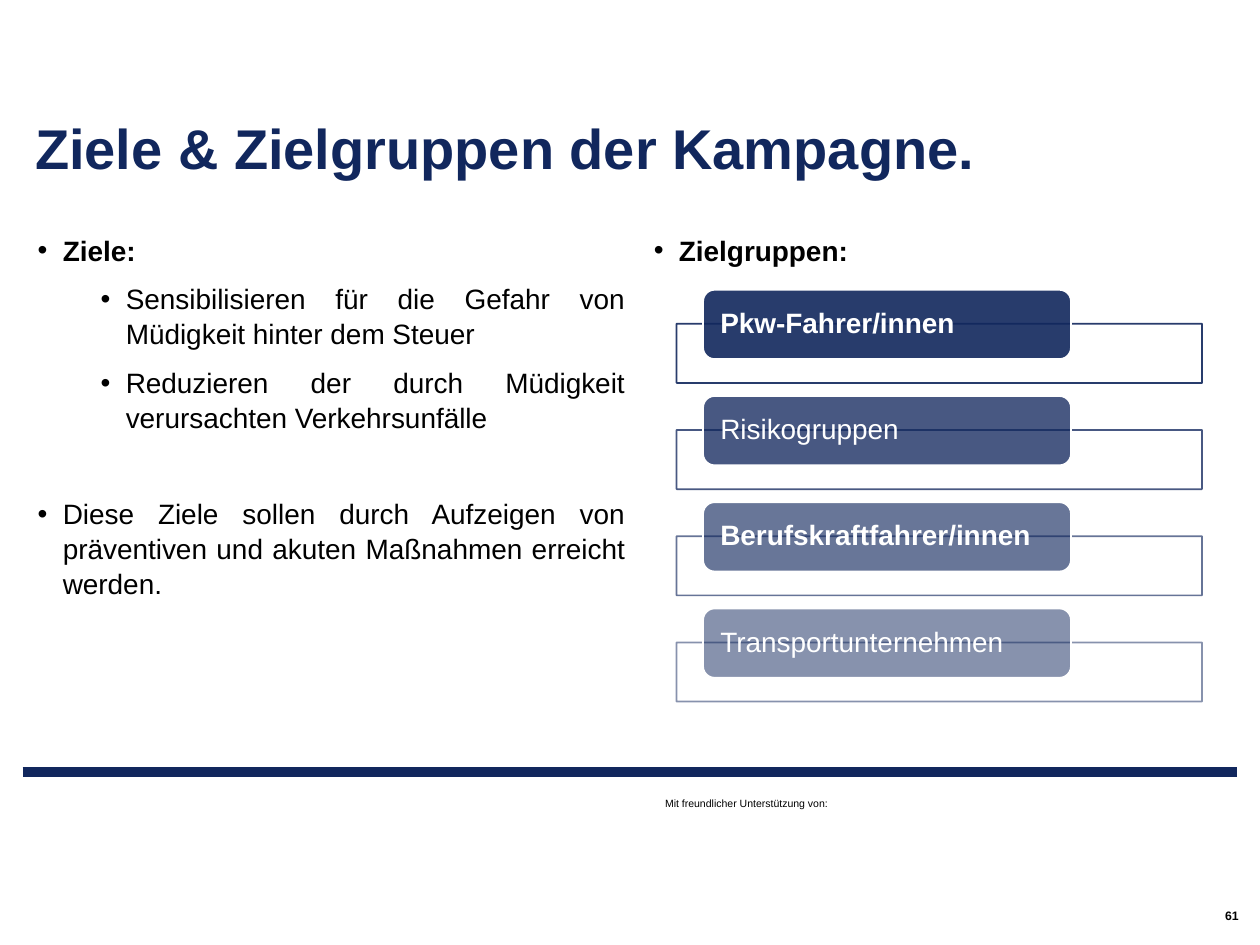
from pptx import Presentation
from pptx.dml.color import RGBColor
from pptx.enum.shapes import MSO_CONNECTOR, MSO_SHAPE
from pptx.enum.text import MSO_ANCHOR, PP_ALIGN
from pptx.oxml.ns import qn
from pptx.util import Inches, Pt
from lxml import etree

RECTANGLE, ROUNDED = MSO_SHAPE.RECTANGLE, MSO_SHAPE.ROUNDED_RECTANGLE
STRAIGHT = MSO_CONNECTOR.STRAIGHT
TOP, MIDDLE, BOTTOM = MSO_ANCHOR.TOP, MSO_ANCHOR.MIDDLE, MSO_ANCHOR.BOTTOM
LEFT, RIGHT, JUSTIFY = PP_ALIGN.LEFT, PP_ALIGN.RIGHT, PP_ALIGN.JUSTIFY
COLORS = {"navy": "11275D", "white": "FFFFFF", "black": "000000"}
FONT = "Arial"


class SlideBuilder:
    def __init__(self, slide):
        self.slide = slide

    def paint(self, color_format, color, alpha=100):
        color_format.rgb = RGBColor.from_string(COLORS[color])
        if alpha < 100:
            node = color_format._xFill.find(qn("a:srgbClr"))
            etree.SubElement(node, qn("a:alpha"), val=str(alpha * 1000))

    def style(self, para, size, color, bold):
        for span in para.runs:
            span.font.name = FONT
            span.font.size = Pt(size)
            span.font.bold = bold
            self.paint_text(span, color)

    def paint_text(self, span, color):
        span.font.color.rgb = RGBColor.from_string(COLORS[color])

    def frame(self, shape, anchor, margin_x, margin_y):
        frame = shape.text_frame
        frame.word_wrap = True
        frame.vertical_anchor = anchor
        frame.margin_left = frame.margin_right = Inches(margin_x)
        frame.margin_top = frame.margin_bottom = Inches(margin_y)
        return frame

    def text_box(self, bounds, anchor=TOP, margin_x=0.1, margin_y=0.05):
        box = self.slide.shapes.add_textbox(*map(Inches, bounds))
        return self.frame(box, anchor, margin_x, margin_y)

    def label(self, bounds, text, size, color="black", bold=False,
              align=LEFT, spacing=1.0, **frame_options):
        para = self.text_box(bounds, **frame_options).paragraphs[0]
        para.text = text
        para.alignment = align
        para.line_spacing = spacing
        self.style(para, size, color, bold)

    def bullets(self, bounds, items):
        frame = self.text_box(bounds)
        for index, (text, level, bold, space_before) in enumerate(items):
            para = frame.add_paragraph() if index else frame.paragraphs[0]
            para.text = text
            para.level = level
            properties = para._p.get_or_add_pPr()
            properties.set("marL", str(Inches(0.2 + 0.5 * level)))
            properties.set("indent", str(Inches(-0.2)))
            etree.SubElement(properties, qn("a:buFont"), typeface=FONT)
            etree.SubElement(properties, qn("a:buChar"), char="•")
            para.alignment = JUSTIFY
            para.line_spacing = 1.04
            para.space_before = Pt(space_before)
            para.space_after = Pt(8)
            self.style(para, 16, "black", bold)

    def shape(self, kind, bounds, fill, fill_alpha, line, line_alpha=100):
        shape = self.slide.shapes.add_shape(kind, *map(Inches, bounds))
        shape.shadow.inherit = False
        shape.fill.solid()
        self.paint_shape(shape.fill, fill, fill_alpha)
        shape.line.width = Pt(1)
        shape.line.fill.solid()
        self.paint_shape(shape.line.fill, line, line_alpha)
        return shape

    def paint_shape(self, fill, color, alpha):
        self.paint(fill.fore_color, color, alpha)

    def target_group(self, top, text, bold, alpha):
        self.shape(RECTANGLE, (5.37, top + 0.27, 4.17, 0.47),
                   "white", 90, "navy", alpha)
        tab = self.shape(ROUNDED, (5.58, top, 2.92, 0.55),
                         "navy", alpha, "white")
        para = self.frame(tab, MIDDLE, 0.11, 0).paragraphs[0]
        para.text = text
        para.alignment = LEFT
        para.line_spacing = 0.9
        self.style(para, 16, "white", bold)

    def rule(self, left, right, top, width):
        line = self.slide.shapes.add_connector(
            STRAIGHT, Inches(left), Inches(top), Inches(right), Inches(top))
        line.line.width = Pt(width)
        line.line.fill.solid()
        self.paint_shape(line.line.fill, "navy", 100)
        etree.SubElement(line._element.spPr, qn("a:effectLst"))


def main():
    deck = Presentation()
    deck.slide_width, deck.slide_height = Inches(10), Inches(7.5)
    page = SlideBuilder(deck.slides.add_slide(deck.slide_layouts[6]))

    page.rule(0.18, 9.82, 6.13, 5.67)
    page.label((5.18, 6.28, 2.03, 0.2), "Mit freundlicher Unterstützung von:", 6)
    page.label((0.18, 0.39, 9.65, 1.05), "Ziele & Zielgruppen der Kampagne.", 32,
               "navy", True, spacing=0.9, anchor=BOTTOM, margin_y=0)

    groups = [
        ("Pkw-Fahrer/innen", True, 90),
        ("Risikogruppen", False, 77),
        ("Berufskraftfahrer/innen", True, 63),
        ("Transportunternehmen", False, 50),
    ]
    for index, (text, bold, alpha) in enumerate(groups):
        page.target_group(2.3 + index * 0.843, text, bold, alpha)

    page.label((6.45, 7.19, 3.38, 0.16), "61", 7, bold=True, align=RIGHT,
               anchor=MIDDLE, margin_x=0, margin_y=0)
    page.bullets((0.2, 1.79, 4.86, 4.29), [
        ("Ziele:", 0, True, 0),
        ("Sensibilisieren für die Gefahr von Müdigkeit hinter dem Steuer", 1, False, 0),
        ("Reduzieren der durch Müdigkeit verursachten Verkehrsunfälle", 1, False, 0),
        ("Diese Ziele sollen durch Aufzeigen von präventiven und akuten "
         "Maßnahmen erreicht werden.", 0, False, 27),
    ])
    page.bullets((5.09, 1.79, 4.72, 4.29), [("Zielgruppen:", 0, True, 0)])

    deck.save("out.pptx")


if __name__ == "__main__":
    main()
